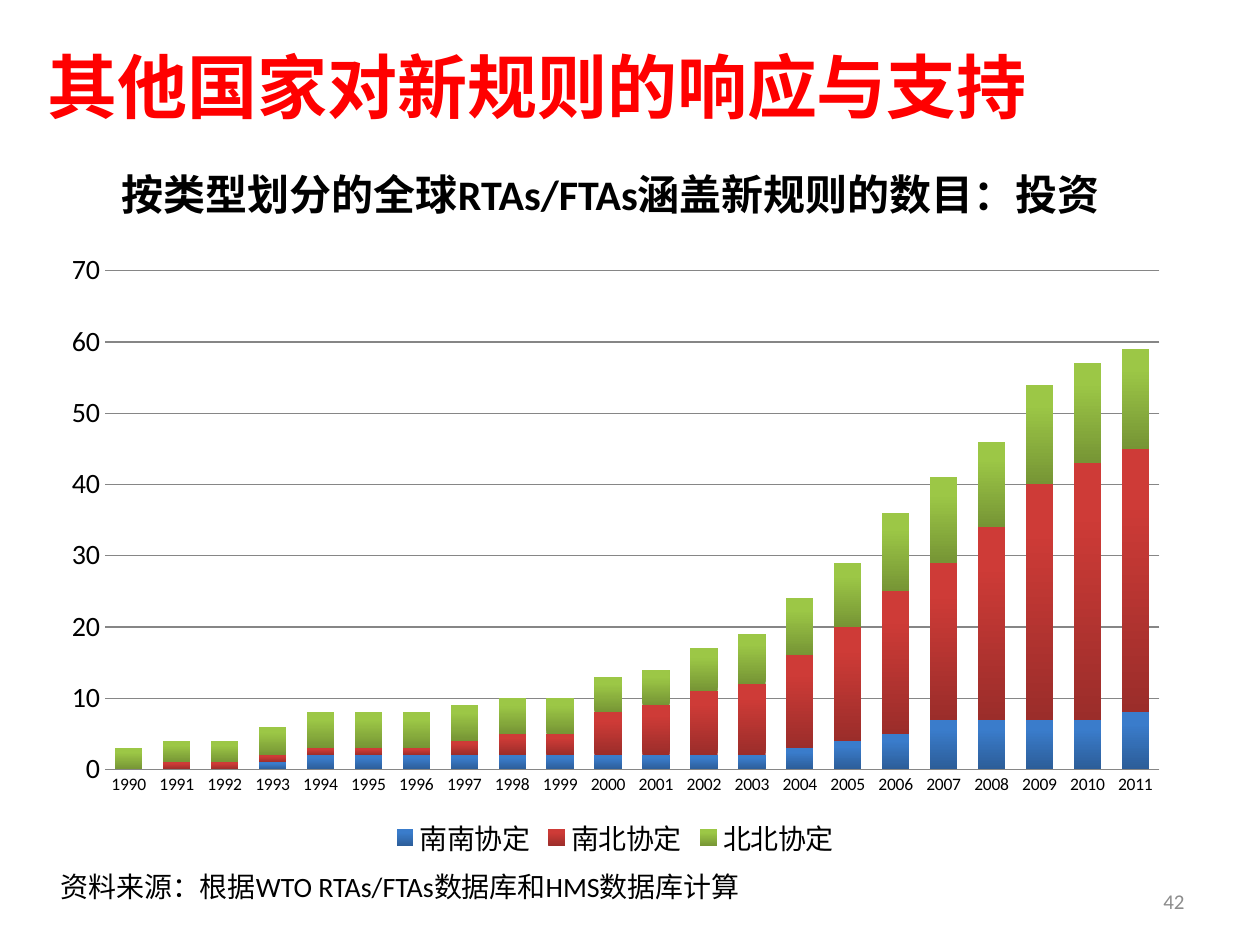
"""Build a slide with a stacked column chart of trade agreements covering investment."""
from pptx import Presentation
from pptx.chart.data import CategoryChartData
from pptx.dml.color import RGBColor
from pptx.enum.chart import XL_CHART_TYPE as ChartType, XL_LEGEND_POSITION as LegendPosition
from pptx.enum.chart import XL_TICK_MARK as TickMark
from pptx.enum.text import MSO_ANCHOR as Anchor, MSO_AUTO_SIZE as AutoSize, PP_ALIGN as Align
from pptx.oxml import parse_xml
from pptx.oxml.ns import nsdecls, qn
from pptx.util import Cm, Pt

COLORS = {"title": "FF0000", "text": "000000", "number": "8C8C8C", "grid": "868686"}
YEARS = [str(year) for year in range(1990, 2012)]
AGREEMENTS = {
    "南南协定": ([0, 0, 0, 1] + [2] * 10 + [3, 4, 5, 7, 7, 7, 7, 8], "2C5D98", "3A7CCB"),
    "南北协定": ([0] + [1] * 6 + [2, 3, 3, 6, 7, 9, 10, 13, 16, 20, 22, 27, 33, 36, 37],
             "9B2D2A", "CE3B37"),
    "北北协定": ([3, 3, 3, 4] + [5] * 8 + [6, 7, 8, 9, 11, 12, 12, 14, 14, 14],
             "769535", "9CC746"),
}


class SlideBuilder:
    """Hold the text style and the current slide."""

    latin = "Calibri"
    east_asian = "Noto Sans CJK SC"

    def __init__(self, slide):
        """Keep the slide to draw on."""
        self.slide = slide

    def place(self, shape, box):
        """Move and size a shape in centimetres."""
        shape.left, shape.top, shape.width, shape.height = (Cm(length) for length in box)

    def style(self, font, size, color="text", bold=False, name=None):
        """Apply size, colour and typefaces to a font."""
        font.size, font.bold, font.name = Pt(size), bold, name or self.latin
        font.color.rgb = RGBColor.from_string(COLORS[color])

    def set_text(self, shape, text, size, color="text", bold=False, align=Align.LEFT,
                 anchor=Anchor.TOP, wrap=True, name=None):
        """Fill a shape with one formatted paragraph."""
        frame = shape.text_frame
        frame.text = text
        frame.word_wrap, frame.vertical_anchor = wrap, anchor
        frame.auto_size = AutoSize.NONE
        paragraph = frame.paragraphs[0]
        paragraph.alignment = align
        self.style(paragraph.font, size, color, bold, name)
        typeface = f'<a:ea {nsdecls("a")} typeface="{self.east_asian}"/>'
        latin = paragraph.font._element.find(qn("a:latin"))
        latin.addnext(parse_xml(typeface))

    def title(self, text, box):
        """Format the title placeholder."""
        shape = self.slide.shapes.title
        self.place(shape, box)
        self.set_text(shape, text, 40, "title", True, wrap=False, name=self.east_asian)

    def text(self, text, box, size, **options):
        """Add a text box."""
        shape = self.slide.shapes.add_textbox(*(Cm(length) for length in box))
        self.set_text(shape, text, size, **options)

    def line(self, line_format):
        """Draw a thin grey chart line."""
        line_format.color.rgb = RGBColor.from_string(COLORS["grid"])
        line_format.width = Pt(0.75)

    def plot_layout(self, chart, **fractions):
        """Fix the inner plot area as fractions of the chart."""
        area = chart._chartSpace.find(qn("c:chart")).find(qn("c:plotArea"))
        for layout in area.findall(qn("c:layout")):
            area.remove(layout)
        modes = '<c:xMode val="edge"/><c:yMode val="edge"/>'
        sizes = "".join(f'<c:{key} val="{value}"/>' for key, value in fractions.items())
        area.insert(0, parse_xml(
            f'<c:layout {nsdecls("c")}><c:manualLayout><c:layoutTarget val="inner"/>'
            f"{modes}{sizes}</c:manualLayout></c:layout>"))

    def stacked_chart(self, categories, groups, box):
        """Add a stacked column chart with gradient columns."""
        data = CategoryChartData()
        data.categories = categories
        for name, (values, _, _) in groups.items():
            data.add_series(name, values)
        lengths = (Cm(length) for length in box)
        chart = self.slide.shapes.add_chart(ChartType.COLUMN_STACKED, *lengths, data).chart
        self.style(chart.font, 10)
        chart.has_title = False
        chart.has_legend = True
        chart.legend.position = LegendPosition.BOTTOM
        chart.legend.include_in_layout = False
        self.style(chart.legend.font, 16)

        plot = chart.plots[0]
        plot.gap_width, plot.overlap, plot.vary_by_categories = 75, 100, False
        for series, (_, dark, light) in zip(plot.series, groups.values()):
            fill = series.format.fill
            fill.gradient()
            fill.gradient_angle = 90
            for stop, color, position in zip(fill.gradient_stops, (dark, light), (0, 0.8)):
                stop.color.rgb = RGBColor.from_string(color)
                stop.position = position

        for axis in (chart.category_axis, chart.value_axis):
            axis.major_tick_mark = axis.minor_tick_mark = TickMark.NONE
        self.style(chart.category_axis.tick_labels.font, 10)
        self.line(chart.category_axis.format.line)
        values = chart.value_axis
        values.minimum_scale, values.maximum_scale, values.major_unit = 0, 70, 10
        values.format.line.fill.background()
        self.style(values.tick_labels.font, 16)
        self.line(values.major_gridlines.format.line)
        self.plot_layout(chart, x=0.05, y=0.05, w=0.93, h=0.8)


def main():
    """Create and save the presentation."""
    presentation = Presentation()
    presentation.slide_width, presentation.slide_height = Cm(25.4), Cm(19.05)
    builder = SlideBuilder(presentation.slides.add_slide(presentation.slide_layouts[5]))
    builder.title("其他国家对新规则的响应与支持", (0.71, 0.74, 20.47, 1.96))
    builder.text("按类型划分的全球RTAs/FTAs涵盖新规则的数目：投资",
                 (2.21, 3.28, 21, 1.27), 24, bold=True)
    builder.stacked_chart(YEARS, AGREEMENTS, (0.97, 4.83, 22.86, 12.57))
    builder.text("资料来源：根据WTO RTAs/FTAs数据库和HMS数据库计算",
                 (0.97, 17.4, 14.8, 0.94), 16)
    builder.text("42", (18.2, 17.65, 5.93, 1.02), 12, color="number",
                 align=Align.RIGHT, anchor=Anchor.MIDDLE)
    presentation.save("out.pptx")


if __name__ == "__main__":
    main()
